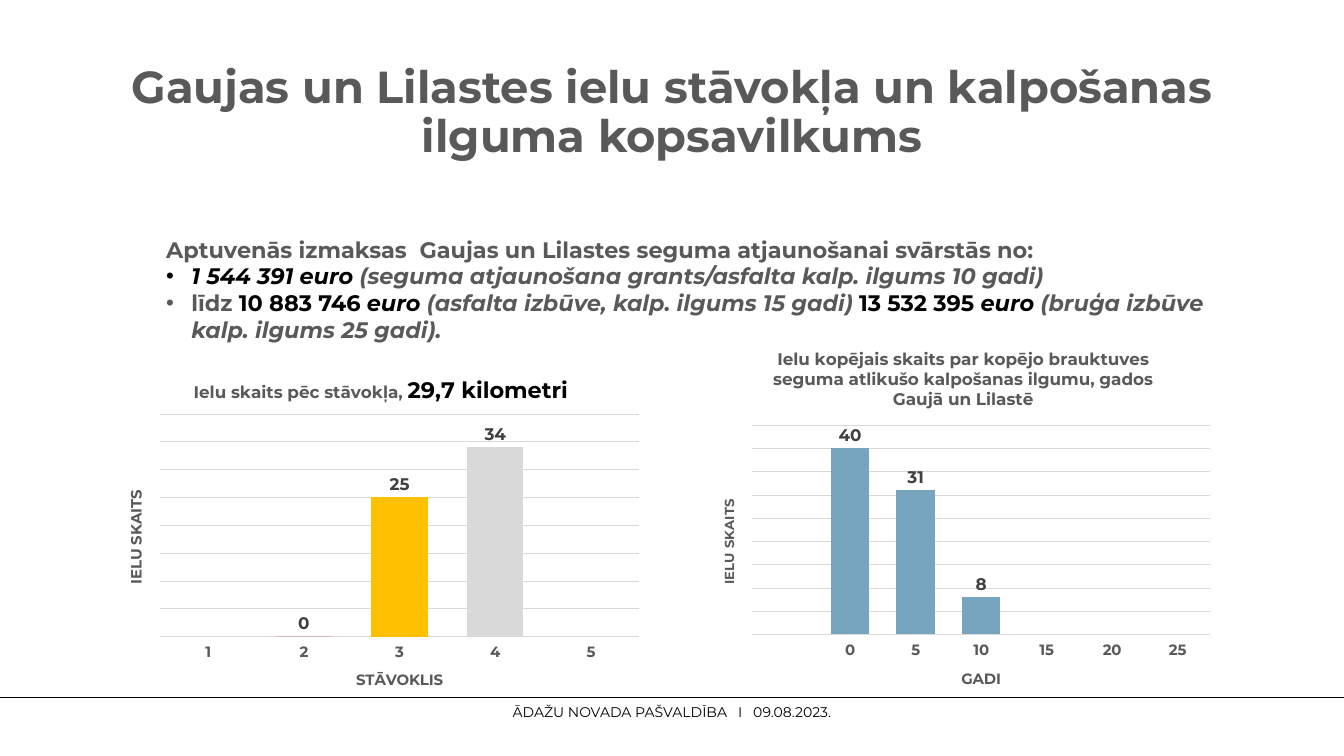
from lxml import etree
from pptx import Presentation
from pptx.chart.data import CategoryChartData
from pptx.dml.color import RGBColor
from pptx.enum.chart import XL_CHART_TYPE as ChartType
from pptx.enum.chart import XL_LABEL_POSITION as LabelPosition
from pptx.enum.chart import XL_TICK_LABEL_POSITION as TickLabels
from pptx.enum.chart import XL_TICK_MARK as TickMark
from pptx.enum.shapes import MSO_CONNECTOR as Connector
from pptx.enum.text import MSO_ANCHOR as Anchor
from pptx.enum.text import PP_ALIGN as Align
from pptx.oxml.ns import qn
from pptx.util import Pt

EMU_PER_PX = 9525
PAGE_WIDTH, PAGE_HEIGHT = 1920, 1080
INDENT = 36
FONT = "Montserrat"

BLACK = RGBColor(0x00, 0x00, 0x00)
GRAY = RGBColor(0x59, 0x59, 0x59)
LABEL_GRAY = RGBColor(0x40, 0x40, 0x40)
LIGHT_GRAY = RGBColor(0xD9, 0xD9, 0xD9)
RED = RGBColor(0xC0, 0x00, 0x00)
AMBER = RGBColor(0xFF, 0xC0, 0x00)
INDIGO = RGBColor(0x44, 0x72, 0xC4)
STEEL_BLUE = RGBColor(0x77, 0xA4, 0xBE)

PLAIN = {"color": GRAY}
PLAIN_ITALIC = {"color": GRAY, "italic": True}
STRONG = {"color": BLACK}
STRONG_ITALIC = {"color": BLACK, "italic": True}

COST_INTRO = [("Aptuvenās izmaksas  Gaujas un Lilastes seguma atjaunošanai svārstās no:", PLAIN)]
COST_BULLETS = [
    [("1 544 391 euro ", STRONG_ITALIC),
     ("(seguma atjaunošana grants/asfalta kalp. ilgums 10 gadi)", PLAIN_ITALIC)],
    [("līdz ", PLAIN),
     ("10 883 746 ", STRONG),
     ("euro ", STRONG_ITALIC),
     ("(asfalta izbūve, kalp. ilgums 15 gadi) ", PLAIN_ITALIC),
     ("13 532 395 ", STRONG),
     ("euro ", STRONG_ITALIC),
     ("(bruģa izbūve kalp. ilgums 25 gadi).", PLAIN_ITALIC)],
]


def px(*lengths):
    return [length * EMU_PER_PX for length in lengths]


def style_font(font, size, color=GRAY, bold=True, italic=False):
    values = {"name": FONT, "size": Pt(size), "bold": bold, "italic": italic}
    for name, value in values.items():
        setattr(font, name, value)
    font.color.rgb = color


def add_spans(para, spans, size):
    """Add (text, format) pairs; a format may override the size."""
    for text, form in spans:
        span = para.add_run()
        span.text = text
        style_font(span.font, **{"size": size, **form})


def add_box(page, place, **frame_values):
    frame = page.shapes.add_textbox(*px(*place)).text_frame
    for name, value in {"word_wrap": True, **frame_values}.items():
        setattr(frame, name, value)
    return frame


def add_bullet(para):
    props = para._p.get_or_add_pPr()
    props.set("marL", str(INDENT * EMU_PER_PX))
    props.set("indent", str(-INDENT * EMU_PER_PX))
    etree.SubElement(props, qn("a:buFont")).set("typeface", "Arial")
    etree.SubElement(props, qn("a:buChar")).set("char", "•")


def add_title(page):
    frame = add_box(page, (132, 58, 1656, 208), vertical_anchor=Anchor.MIDDLE)
    para = frame.paragraphs[0]
    para.alignment, para.line_spacing = Align.CENTER, 0.9
    add_spans(para, [("Gaujas un Lilastes ielu stāvokļa un kalpošanas ilguma kopsavilkums", PLAIN)], 48)


def add_costs(page):
    frame = add_box(page, (228, 332, 1560, 165))
    add_spans(frame.paragraphs[0], COST_INTRO, 24)
    for spans in COST_BULLETS:
        para = frame.add_paragraph()
        add_bullet(para)
        add_spans(para, spans, 24)


def place_plot(chart, left, top, width, height):
    """Fix the inner plot area, in fractions of the chart."""
    plot_area = chart._chartSpace.chart.plotArea
    for old in plot_area.findall(qn("c:layout")):
        plot_area.remove(old)
    layout = etree.Element(qn("c:layout"))
    plot_area.insert(0, layout)
    manual = etree.SubElement(layout, qn("c:manualLayout"))
    values = {"layoutTarget": "inner", "xMode": "edge", "yMode": "edge",
              "x": left, "y": top, "w": width, "h": height}
    for name, value in values.items():
        etree.SubElement(manual, qn(f"c:{name}")).set("val", str(value))


def style_axes(chart, category_title, value_title_size, maximum):
    category_axis, value_axis = chart.category_axis, chart.value_axis
    titles = ((category_axis, category_title, 16),
              (value_axis, "IELU SKAITS", value_title_size))
    for axis, text, size in titles:
        add_spans(axis.axis_title.text_frame.paragraphs[0], [(text, PLAIN)], size)

    category_axis.major_tick_mark = TickMark.NONE
    category_axis.tick_label_position = TickLabels.LOW
    category_axis.format.line.fill.background()
    style_font(category_axis.tick_labels.font, 16)

    values = {"visible": False, "minimum_scale": 0, "maximum_scale": maximum,
              "major_unit": 5, "has_major_gridlines": True}
    for name, value in values.items():
        setattr(value_axis, name, value)
    grid = value_axis.major_gridlines.format.line
    grid.color.rgb, grid.width = LIGHT_GRAY, Pt(0.75)


def style_columns(chart, color, point_colors):
    plot = chart.plots[0]
    plot.gap_width, plot.vary_by_categories = 70, False
    series = plot.series[0]
    targets = [(series, color)]
    targets += [(series.points[index], value) for index, value in point_colors.items()]
    for target, fill_color in targets:
        target.format.fill.solid()
        target.format.fill.fore_color.rgb = fill_color
    labels = series.data_labels
    labels.show_value, labels.position = True, LabelPosition.OUTSIDE_END
    style_font(labels.font, 18, LABEL_GRAY)


def add_column_chart(page, place, plot_place, title, categories, values, category_title,
                     value_title_size, maximum, color, point_colors):
    data = CategoryChartData()
    data.categories = categories
    data.add_series("Series 1", values)
    chart = page.shapes.add_chart(ChartType.COLUMN_CLUSTERED, *px(*place), data).chart
    chart.has_legend = False
    chart.font.name, chart.font.size = "Calibri", Pt(10)
    chart.font.color.rgb = BLACK
    add_spans(chart.chart_title.text_frame.paragraphs[0], title, 18)
    chart.chart_title.include_in_layout = False
    style_axes(chart, category_title, value_title_size, maximum)
    style_columns(chart, color, point_colors)
    place_plot(chart, *plot_place)


def add_footer(page):
    rule = page.shapes.add_connector(Connector.STRAIGHT, *px(-1, 996, 1921, 996))
    rule.line.color.rgb, rule.line.width = BLACK, Pt(0.75)
    etree.SubElement(rule._element.spPr, qn("a:effectLst"))
    frame = add_box(page, (10, 1005, 1900, 24), margin_left=0, margin_right=0,
                    margin_top=0, margin_bottom=0)
    para = frame.paragraphs[0]
    para.alignment, para.line_spacing = Align.CENTER, Pt(18)
    add_spans(para, [("ĀDAŽU NOVADA PAŠVALDĪBA   I   09.08.2023.", {"color": BLACK, "bold": False})], 15)


def main():
    deck = Presentation()
    deck.slide_width, deck.slide_height = px(PAGE_WIDTH, PAGE_HEIGHT)
    page = deck.slides.add_slide(deck.slide_layouts[6])
    add_title(page)
    add_costs(page)
    add_column_chart(
        page, (160, 519, 768, 482), (0.09, 0.15, 0.89, 0.66),
        [("Ielu skaits pēc stāvokļa, ", PLAIN), ("29,7 kilometri", {"color": BLACK, "size": 24})],
        ["1", "2", "3", "4", "5"], [None, 0, 25, 34, None],
        "STĀVOKLIS", 16, 40, INDIGO, {1: RED, 2: AMBER, 3: LIGHT_GRAY})
    add_column_chart(
        page, (1008, 476, 736, 525), (0.09, 0.25, 0.89, 0.57),
        [("Ielu kopējais skaits par kopējo brauktuves seguma atlikušo kalpošanas ilgumu, "
          "gados Gaujā un Lilastē", PLAIN)],
        ["", "0", "5", "10", "15", "20", "25"], [None, 40, 31, 8, None, None, None],
        "GADI", 14, 45, STEEL_BLUE, {})
    add_footer(page)
    deck.save("out.pptx")


if __name__ == "__main__":
    main()
